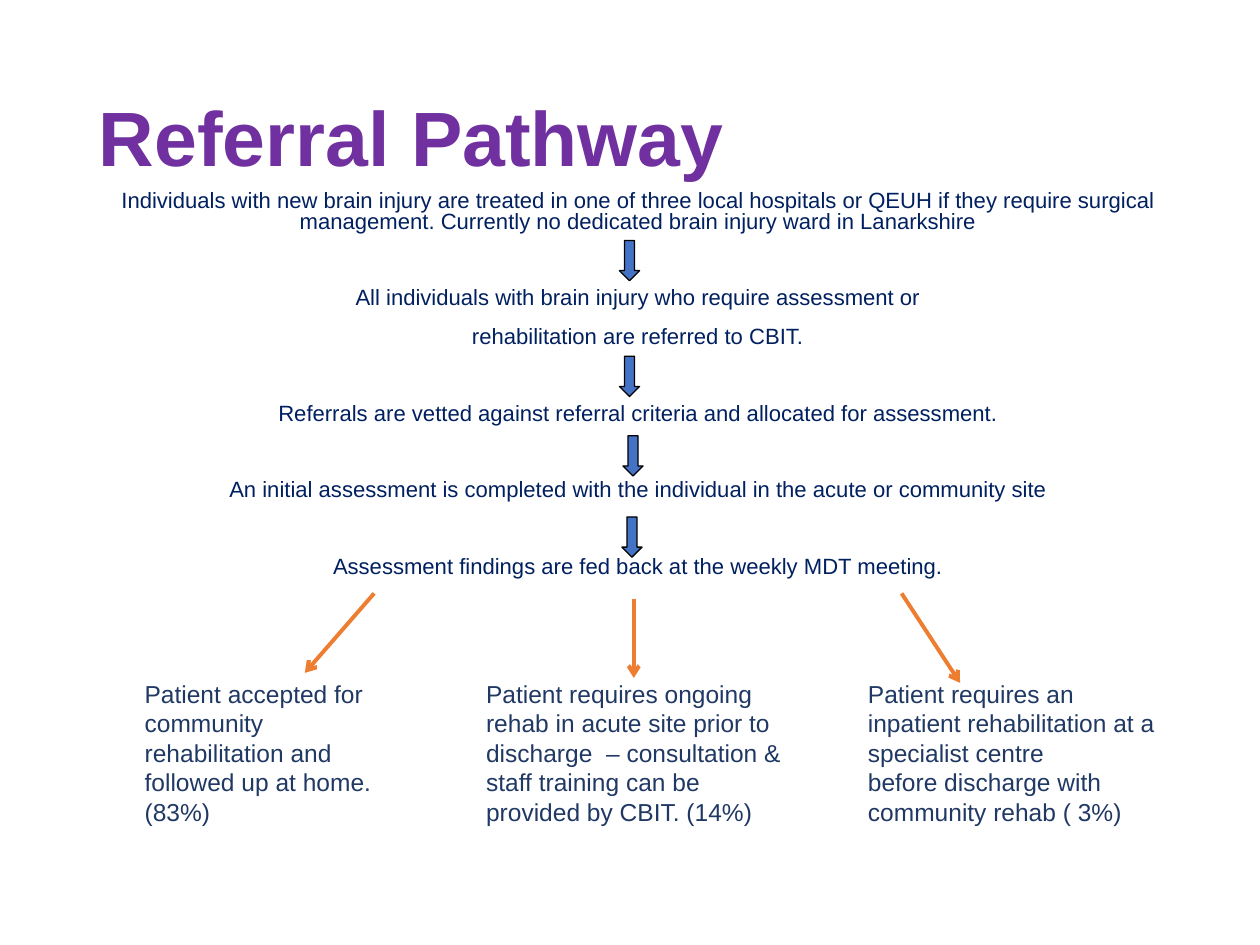
from lxml.etree import SubElement
from pptx import Presentation
from pptx.dml.color import RGBColor
from pptx.enum.shapes import MSO_CONNECTOR as Connector, MSO_SHAPE as Shape
from pptx.enum.text import MSO_ANCHOR as Anchor, PP_ALIGN as Align
from pptx.oxml.ns import qn
from pptx.util import Pt


def color(hex_string):
    return RGBColor.from_string(hex_string)


def add_text(box, paragraphs, font_format, anchor=Anchor.TOP):
    """Add a wrapped text box; each paragraph is (text, paragraph format)."""
    frame = slide.shapes.add_textbox(*map(Pt, box)).text_frame
    frame.word_wrap = True
    frame.vertical_anchor = anchor
    for index, (text, paragraph_format) in enumerate(paragraphs):
        paragraph = frame.add_paragraph() if index else frame.paragraphs[0]
        paragraph.text = text
        for name, value in paragraph_format.items():
            setattr(paragraph, name, value)
        paragraph.font.name = "Arial"
        for name, value in font_format.items():
            if name == "color":
                paragraph.font.color.rgb = color(value)
            else:
                setattr(paragraph.font, name, value)


presentation = Presentation()
presentation.slide_width, presentation.slide_height = Pt(720), Pt(540)
slide = presentation.slides.add_slide(presentation.slide_layouts[6])

add_text((49.5, 28.8, 621, 104.4),
         [("Referral Pathway", {"line_spacing": 0.9})],
         {"size": Pt(44), "bold": True, "color": "7030A0"}, Anchor.MIDDLE)

# Pathway steps, with the space before each in points; wide gaps hold an arrow
ARROW_GAP = 31.6
steps = [
    ("Individuals with new brain injury are treated in one of three local hospitals or QEUH "
     "if they require surgical management. Currently no dedicated brain injury ward in "
     "Lanarkshire", 0),
    ("All individuals with brain injury who require assessment or", ARROW_GAP),
    ("rehabilitation are referred to CBIT.", 10),
    ("Referrals are vetted against referral criteria and allocated for assessment.", ARROW_GAP),
    ("An initial assessment is completed with the individual in the acute or community site",
     ARROW_GAP),
    ("Assessment findings are fed back at the weekly MDT meeting.", ARROW_GAP),
]
add_text((34.8, 105.8, 658.8, 236.2),
         [(text, {"alignment": Align.CENTER, "line_spacing": 0.8, "space_before": Pt(gap)})
          for text, gap in steps],
         {"size": Pt(12.6), "color": "002060"})

for left, top in [(354, 137.4), (354, 203.6), (356, 249), (355.4, 295.4)]:
    arrow = slide.shapes.add_shape(Shape.DOWN_ARROW, Pt(left), Pt(top), Pt(11.5), Pt(23))
    arrow.shadow.inherit = False
    arrow.fill.solid()
    arrow.fill.fore_color.rgb = color("4472C4")
    arrow.line.color.rgb = color("000000")
    arrow.line.width = Pt(0.75)

outcomes = [
    (75.6, 158.4, ["Patient accepted for community rehabilitation and followed up at home. (83%)"]),
    (270.7, 188, ["Patient requires ongoing rehab in acute site prior to discharge  – consultation "
                  "& staff training can be provided by CBIT. (14%)"]),
    (488.9, 188, ["Patient requires an inpatient rehabilitation at a specialist centre",
                  "before discharge with community rehab ( 3%)"]),
]
for left, width, texts in outcomes:
    add_text((left, 384.5, width, 92.2), [(text, {}) for text in texts],
             {"size": Pt(14), "color": "203864"})

branches = [(213.8, 339.1, 174.2, 384.5), (515.2, 339.1, 548.6, 390.2), (362.2, 342, 362.2, 387.4)]
for ends in branches:
    branch = slide.shapes.add_connector(Connector.STRAIGHT, *map(Pt, ends))
    branch.line.color.rgb = color("ED7D31")
    branch.line.width = Pt(2.25)
    SubElement(branch.line._get_or_add_ln(), qn("a:tailEnd"), type="arrow")
    SubElement(branch._element.spPr, qn("a:effectLst"))

presentation.save("out.pptx")
